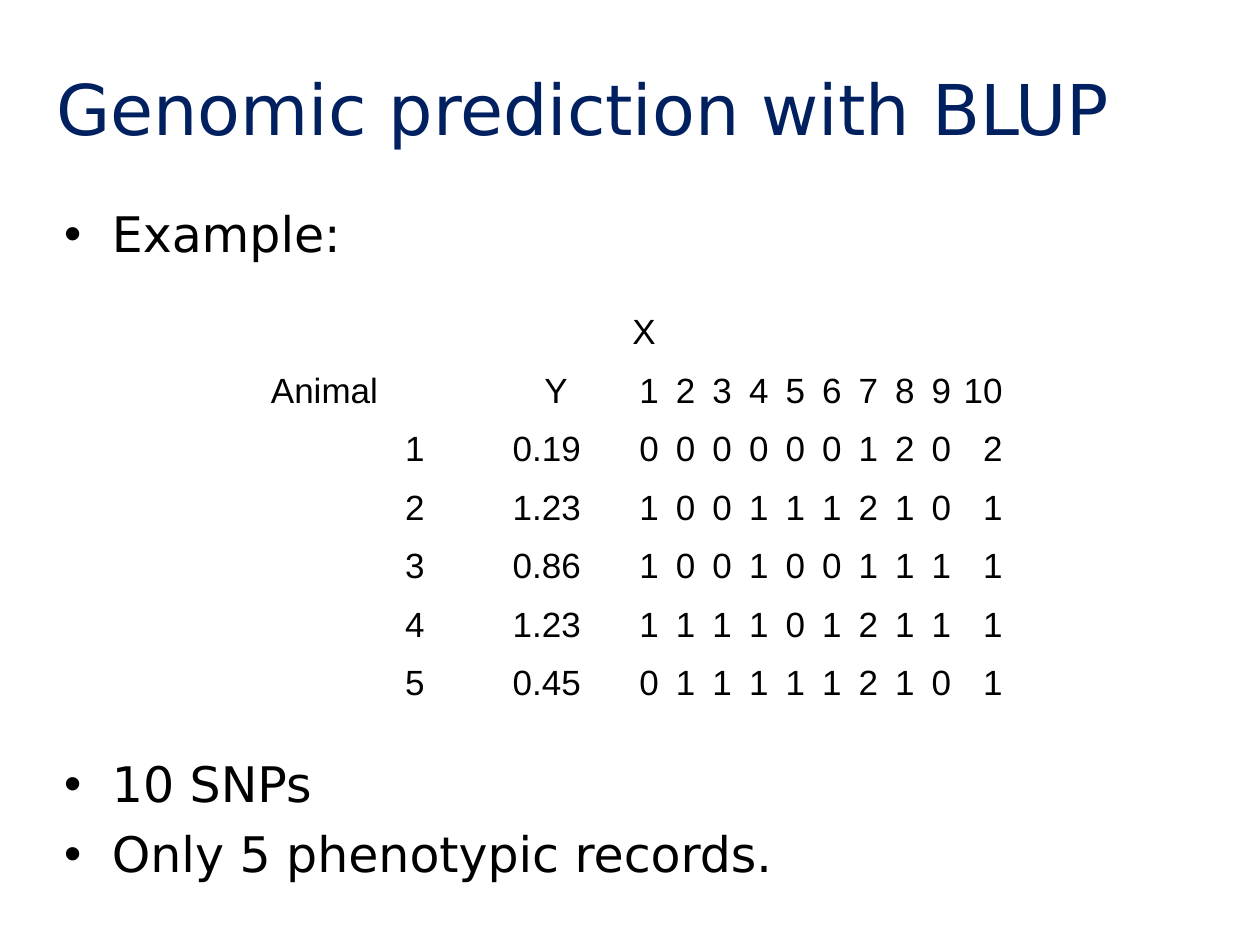
from pptx import Presentation, util as u
from pptx.dml.color import RGBColor
from pptx.enum import text
from pptx.oxml import parse_xml
from pptx.oxml.ns import nsdecls

COLUMN_WIDTHS = [1.24, 1.24, 0.62] + [0.29] * 8 + [0.41]
SNP_NUMBERS = [str(number) for number in range(1, 11)]
RECORDS = [
    ("0.19", "0000001202"),
    ("1.23", "1001112101"),
    ("0.86", "1001001111"),
    ("1.23", "1111012111"),
    ("0.45", "0111112101"),
]


def colour(value):
    return RGBColor.from_string(value)


class SlideBuilder:
    """Holds the style and the current slide, and adds each kind of element."""

    heading_font = "DejaVu Sans"
    table_font = "Arial"
    navy = "002060"
    black = "000000"
    white = "FFFFFF"

    def __init__(self, presentation):
        self.slide = presentation.slides.add_slide(presentation.slide_layouts[6])
        fill = self.slide.background.fill
        fill.solid()
        fill.fore_color.rgb = colour(self.white)

    def format_runs(self, paragraph, font_name, size, font_colour):
        for run in paragraph.runs:
            run.font.name = font_name
            run.font.size = u.Pt(size)
            run.font.color.rgb = colour(font_colour)

    def text_box(self, left, top, width, height):
        box = self.slide.shapes.add_textbox(
            u.Inches(left), u.Inches(top), u.Inches(width), u.Inches(height))
        box.text_frame.word_wrap = True
        return box.text_frame

    def title(self, wording):
        frame = self.text_box(0.35, 0.6, 9.37, 0.5)
        frame.vertical_anchor = text.MSO_ANCHOR.MIDDLE
        frame.text = wording
        self.format_runs(frame.paragraphs[0], self.heading_font, 40, self.navy)

    def bullets(self, items):
        frame = self.text_box(0.35, 1.57, 9.37, 5.1)
        for index, (wording, space_before) in enumerate(items):
            paragraph = frame.add_paragraph() if index else frame.paragraphs[0]
            paragraph.text = wording
            if space_before:
                paragraph.space_before = u.Pt(space_before)
            properties = paragraph._p.get_or_add_pPr()
            properties.set("marL", str(u.Inches(0.44)))
            properties.set("indent", str(u.Inches(-0.38)))
            properties.append(parse_xml(f'<a:buFont {nsdecls("a")} typeface="Arial"/>'))
            properties.append(parse_xml(f'<a:buChar {nsdecls("a")} char="•"/>'))
            self.format_runs(paragraph, self.heading_font, 28, self.black)

    def table(self, rows):
        frame = self.slide.shapes.add_table(
            len(rows), len(COLUMN_WIDTHS), u.Inches(2.14), u.Inches(2.33),
            u.Inches(sum(COLUMN_WIDTHS)), u.Inches(3.25))
        table = frame.table
        table.first_row = table.horz_banding = False
        for column, width in zip(table.columns, COLUMN_WIDTHS):
            column.width = u.Inches(width)
        for row_index, row in enumerate(rows):
            for column_index, wording in enumerate(row):
                self.cell(table.cell(row_index, column_index), wording)

    def cell(self, cell, wording):
        left_margins = {"X": 0.4, "Y": 0.94, "Animal": 0.01}
        cell.margin_left = u.Inches(left_margins.get(wording, 0.01))
        cell.margin_right = cell.margin_top = u.Inches(0.01)
        cell.margin_bottom = 0
        cell.vertical_anchor = text.MSO_ANCHOR.BOTTOM
        properties = cell._tc.get_or_add_tcPr()
        for side in ("lnL", "lnR", "lnT", "lnB"):
            properties.append(parse_xml(
                f'<a:{side} {nsdecls("a")} w="{u.Pt(1)}"><a:solidFill>'
                f'<a:srgbClr val="{self.white}"/></a:solidFill></a:{side}>'))
        cell.fill.background()
        paragraph = cell.text_frame.paragraphs[0]
        paragraph.text = wording
        if wording not in left_margins:
            paragraph.alignment = text.PP_ALIGN.RIGHT
        self.format_runs(paragraph, self.table_font, 20, self.black)


def main():
    presentation = Presentation()
    presentation.slide_width = u.Inches(10)
    presentation.slide_height = u.Inches(7.5)

    builder = SlideBuilder(presentation)
    builder.title("Genomic prediction with BLUP")
    builder.bullets([
        ("Example:", 0),
        ("10 SNPs", 280.5),
        ("Only 5 phenotypic records.", 6.5),
    ])
    rows = [["", "", "X"] + [""] * 9, ["Animal", "Y"] + SNP_NUMBERS]
    for animal, (phenotype, genotypes) in enumerate(RECORDS, start=1):
        rows.append([str(animal), phenotype, *genotypes])
    builder.table(rows)

    presentation.save("out.pptx")


if __name__ == "__main__":
    main()
